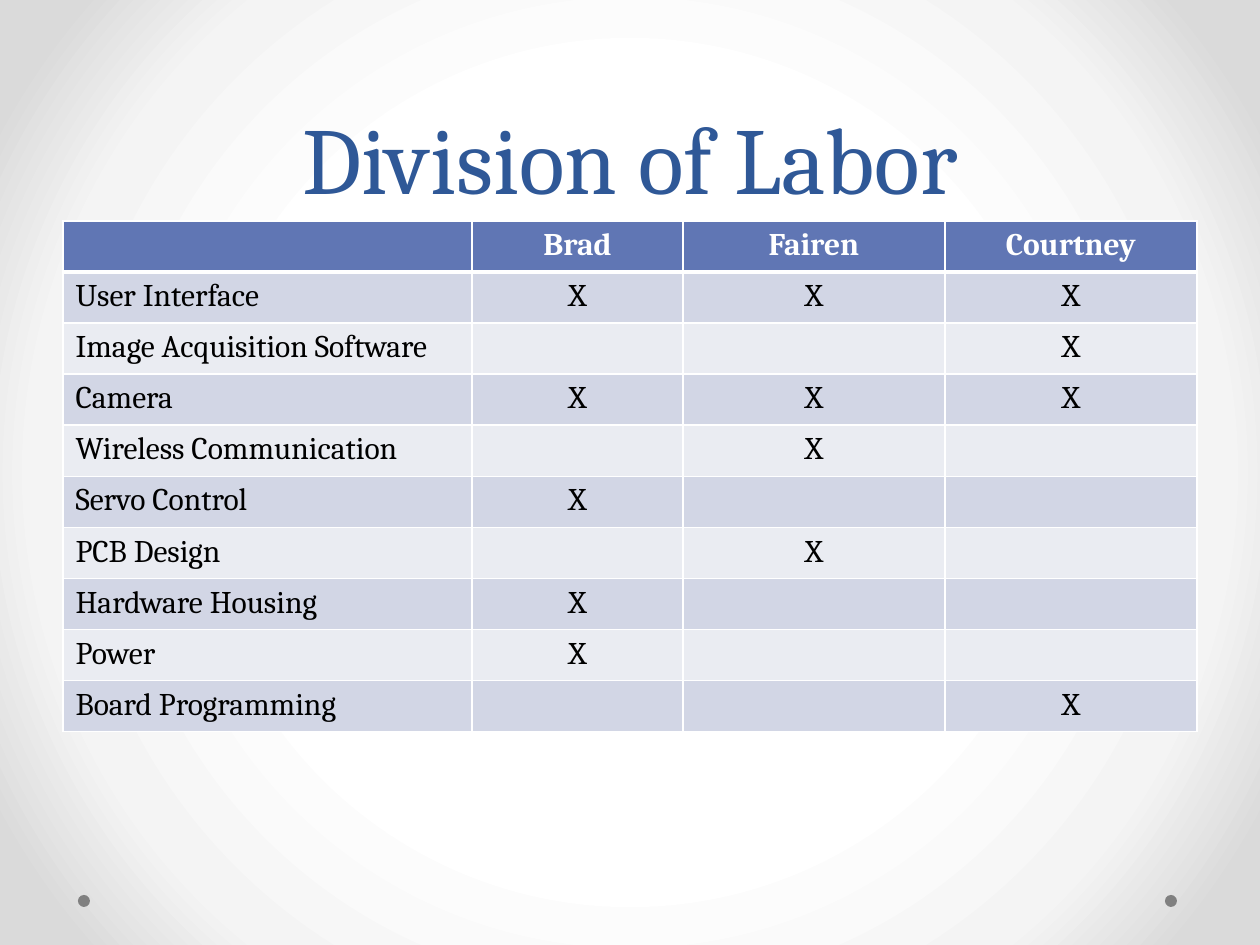
from pptx import Presentation
from pptx.dml.color import RGBColor
from pptx.enum.shapes import MSO_SHAPE as Shape
from pptx.enum.text import MSO_ANCHOR as Anchor, MSO_AUTO_SIZE as Fit, PP_ALIGN as Align
from pptx.oxml import parse_xml
from pptx.oxml.ns import nsdecls
from pptx.util import Pt

SCALE = 914400 / 126
FONT = "Cambria"
NAVY = RGBColor(0x2F, 0x58, 0x97)
BLUE = RGBColor(0x60, 0x76, 0xB4)
DARK = RGBColor(0xD2, 0xD6, 0xE5)
PALE = RGBColor(0xEA, 0xEC, 0xF2)
WHITE = RGBColor(0xFF, 0xFF, 0xFF)
BLACK = RGBColor(0, 0, 0)
GRAY = RGBColor(0x80, 0x80, 0x80)


def px(*sizes):
    """Turn pixel lengths into EMU."""
    return [round(size * SCALE) for size in sizes]


def style(para, size, color, bold=False):
    for run in para.runs:
        font = run.font
        font.name, font.size, font.bold = FONT, Pt(size), bold
        font.color.rgb = color


deck = Presentation()
deck.slide_width, deck.slide_height = px(1260, 945)
slide = deck.slides.add_slide(deck.slide_layouts[5])

# Round glow behind the page
stops = "".join(
    f'<a:gs pos="{pos}000"><a:srgbClr val="{color}"/></a:gs>'
    for pos, color in ((50, "FFFFFF"), (76, "F4F4F4"), (92, "DADADA")))
slide.element.cSld.insert(0, parse_xml(
    f'<p:bg {nsdecls("p", "a")}><p:bgPr><a:gradFill rotWithShape="1">'
    f'<a:gsLst>{stops}</a:gsLst><a:path path="circle">'
    '<a:fillToRect l="50000" t="50000" r="50000" b="50000"/></a:path>'
    '</a:gradFill><a:effectLst/></p:bgPr></p:bg>'))

for left in (1165, 78):
    dot = slide.shapes.add_shape(Shape.OVAL, *px(left, 895, 12, 12))
    dot.shadow.inherit = False
    dot.fill.solid()
    dot.fill.fore_color.rgb = GRAY
    dot.line.fill.background()

title = slide.shapes.title
title.left, title.top, title.width, title.height = px(63, 0, 1134, 220)
frame = title.text_frame
frame.text = "Division of Labor"
frame.auto_size = Fit.NONE
frame.vertical_anchor = Anchor.BOTTOM
head = frame.paragraphs[0]
head.alignment = Align.CENTER
head.line_spacing = Pt(58)
style(head, 54, NAVY)

# Each task with one mark per person
names = ("", "Brad", "Fairen", "Courtney")
tasks = (
    ("User Interface", "XXX"),
    ("Image Acquisition Software", "  X"),
    ("Camera", "XXX"),
    ("Wireless Communication", " X "),
    ("Servo Control", "X  "),
    ("PCB Design", " X "),
    ("Hardware Housing", "X  "),
    ("Power", "X  "),
    ("Board Programming", "  X"),
)
rows = [names] + [(task, *marks) for task, marks in tasks]
table = slide.shapes.add_table(
    len(rows), len(names), *px(63, 221, 1134, 511)).table
for col, width in zip(table.columns, px(409, 211, 262, 252)):
    col.width = width
for row in table.rows:
    row.height = px(51)[0]

for r, row in enumerate(rows):
    for c, text in enumerate(row):
        cell = table.cell(r, c)
        cell.text = text.strip()
        para = cell.text_frame.paragraphs[0]
        para.alignment = Align.CENTER if c else Align.LEFT
        style(para, 18, BLACK if r else WHITE, bold=r == 0)
        cell.fill.solid()
        cell.fill.fore_color.rgb = (DARK if r % 2 else PALE) if r else BLUE
        props = cell._tc.get_or_add_tcPr()
        for i, side in enumerate("LRTB"):
            thick = (side, r) in (("B", 0), ("T", 1))
            props.insert(i, parse_xml(
                f'<a:ln{side} {nsdecls("a")} w="{Pt(3 if thick else 1)}">'
                f'<a:solidFill><a:srgbClr val="{WHITE}"/></a:solidFill>'
                f'</a:ln{side}>'))

deck.save("out.pptx")
